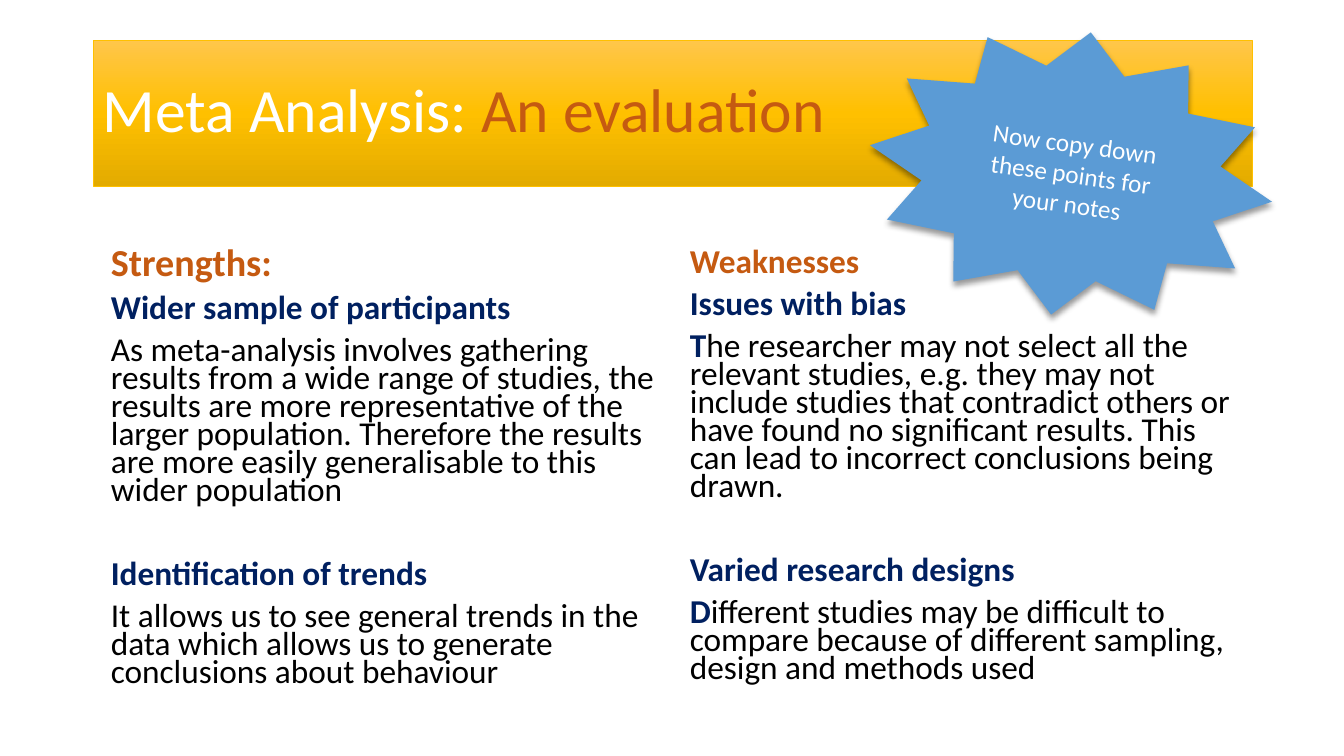
from dataclasses import dataclass

from lxml import etree
from pptx import Presentation
from pptx.dml.color import RGBColor
from pptx.enum.shapes import MSO_SHAPE
from pptx.enum.text import MSO_ANCHOR, PP_ALIGN
from pptx.oxml.ns import qn
from pptx.util import Emu, Pt

RECTANGLE = MSO_SHAPE.RECTANGLE
STAR = MSO_SHAPE.STAR_12_POINT
MIDDLE = MSO_ANCHOR.MIDDLE
LEFT = PP_ALIGN.LEFT
CENTER = PP_ALIGN.CENTER
EMU_PER_PX = 914400 / 100.8


@dataclass(frozen=True)
class Theme:
    """Colours, font and type sizes of the slide."""

    font: str = "Calibri"
    white: str = "FFFFFF"
    black: str = "000000"
    orange: str = "C55A11"
    navy: str = "002060"
    gold: str = "FFC000"
    gold_stops: tuple = ((0, "FFC64B"), (50, "FFC000"), (100, "E3AB00"))
    blue: str = "5B9BD5"
    title_size: float = 44
    lead_size: float = 27.2
    body_size: float = 23.8
    burst_size: float = 18


THEME = Theme()

STRENGTHS = (
    ("Wider sample of participants", "",
     "As meta-analysis involves gathering results from a wide range of studies, "
     "the results are more representative of the larger population. Therefore the "
     "results are more easily generalisable to this wider population"),
    ("Identification of trends", "",
     "It allows us to see general trends in the data which allows us to generate "
     "conclusions about behaviour"),
)
WEAKNESSES = (
    ("Issues with bias", "T",
     "he researcher may not select all the relevant studies, e.g. they may not "
     "include studies that contradict others or have found no significant results. "
     "This can lead to incorrect conclusions being drawn."),
    ("Varied research designs", "D",
     "ifferent studies may be difficult to compare because of different sampling, "
     "design and methods used"),
)


def px(length):
    """Turn whole pixels into EMU."""
    return Emu(round(length * EMU_PER_PX))


def rgb(colour):
    """Turn a hex string into a colour."""
    return RGBColor.from_string(colour)


def style(font, size, colour, bold=False):
    """Set typeface, size, colour and weight of a font."""
    font.name = THEME.font
    font.size = Pt(size)
    font.color.rgb = rgb(colour)
    font.bold = bold


def add_run(paragraph, text, colour, bold=False):
    """Add a run with its own colour and weight."""
    run = paragraph.add_run()
    run.text = text
    run.font.color.rgb = rgb(colour)
    run.font.bold = bold


def add_panel(slide, preset, box):
    """Add a shadowless preset shape with middle-anchored text."""
    panel = slide.shapes.add_shape(preset, *map(px, box))
    panel.shadow.inherit = False
    panel.text_frame.word_wrap = True
    panel.text_frame.vertical_anchor = MIDDLE
    return panel


def add_title_bar(slide, box):
    """Add the gold gradient bar with the two-colour title."""
    bar = add_panel(slide, RECTANGLE, box)
    bar.fill.gradient()
    bar.fill.gradient_angle = 270
    stops = next(bar._element.iter(qn("a:gsLst")))
    for stop in list(stops):
        stops.remove(stop)
    for position, colour in THEME.gold_stops:
        stop = etree.SubElement(stops, qn("a:gs"), pos=str(position * 1000))
        etree.SubElement(stop, qn("a:srgbClr"), val=colour)
    bar.line.color.rgb = rgb(THEME.gold)
    bar.line.width = Pt(0.5)
    title = bar.text_frame.paragraphs[0]
    title.alignment = LEFT
    title.line_spacing = 0.9
    style(title.font, THEME.title_size, THEME.white)
    add_run(title, "Meta Analysis: ", THEME.white)
    add_run(title, "An evaluation", THEME.orange)


def add_column(slide, box, heading, heading_size, points):
    """Add a column with a heading and its evaluation points."""
    frame = slide.shapes.add_textbox(*map(px, box)).text_frame
    frame.word_wrap = True

    def set_up(paragraph, size, colour, bold, gap=10):
        """Give a column paragraph its spacing and font."""
        paragraph.line_spacing = 0.7
        paragraph.space_before = Pt(gap)
        style(paragraph.font, size, colour, bold)

    lead = frame.paragraphs[0]
    lead.text = heading
    set_up(lead, heading_size, THEME.orange, True)
    for index, (name, initial, explanation) in enumerate(points):
        point = frame.add_paragraph()
        point.text = name
        set_up(point, THEME.body_size, THEME.navy, True, 40 if index else 10)
        detail = frame.add_paragraph()
        set_up(detail, THEME.body_size, THEME.black, False)
        if initial:
            add_run(detail, initial, THEME.navy, True)
        add_run(detail, explanation, THEME.black)


def add_burst(slide, box):
    """Add the tilted star with its reminder and soft shadow."""
    burst = add_panel(slide, STAR, box)
    burst.rotation = 8
    burst.fill.solid()
    burst.fill.fore_color.rgb = rgb(THEME.blue)
    burst.line.fill.background()
    effects = next(burst._element.iter(qn("a:effectLst")))
    shadow = etree.SubElement(
        effects, qn("a:outerShdw"), blurRad=str(Pt(4)), dist=str(Pt(3)),
        dir="5400000", rotWithShape="0")
    shade = etree.SubElement(shadow, qn("a:srgbClr"), val=THEME.black)
    etree.SubElement(shade, qn("a:alpha"), val="40000")
    reminder = burst.text_frame.paragraphs[0]
    reminder.text = "Now copy down these points for your notes"
    reminder.alignment = CENTER
    style(reminder.font, THEME.burst_size, THEME.white)


def add_evaluation_slide(presentation, box):
    """Add the slide, placing its parts inside the given box."""
    slide = presentation.slides.add_slide(presentation.slide_layouts[6])
    left, top, width, height = box
    add_title_bar(slide, (left + 93, top + 40, width - 185, 146))
    columns = (("Strengths:", THEME.lead_size, STRENGTHS),
               ("Weaknesses", THEME.body_size, WEAKNESSES))
    for index, column in enumerate(columns):
        column_box = (left + 101 + index * 579, top + 246, 571, height - 276)
        add_column(slide, column_box, *column)
    add_burst(slide, (left + 868, top + 31, 406, 285))


def main():
    """Build and save the presentation."""
    presentation = Presentation()
    width, height = 1344, 756
    presentation.slide_width = px(width)
    presentation.slide_height = px(height)
    add_evaluation_slide(presentation, (0, 0, width, height))
    presentation.save("out.pptx")


if __name__ == "__main__":
    main()
